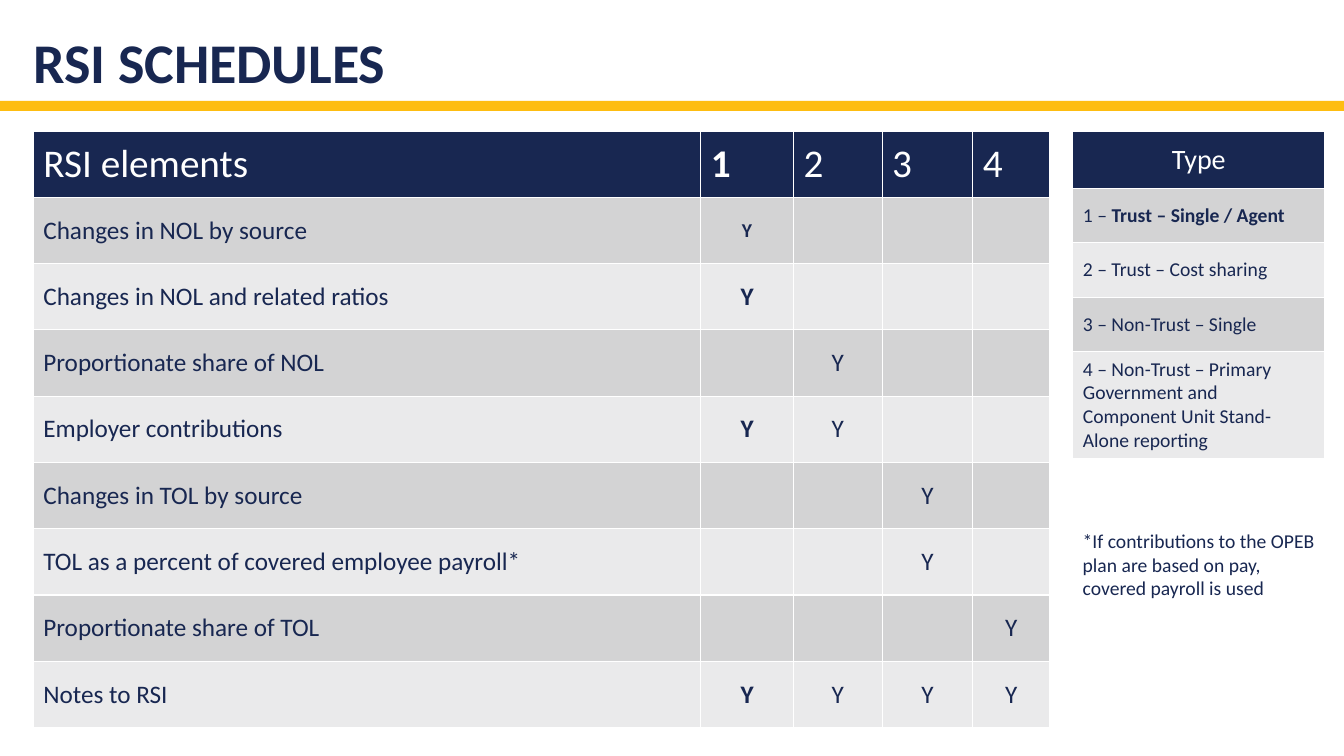
from pptx import Presentation
from pptx.dml.color import RGBColor as Rgb
from pptx.enum.shapes import MSO_SHAPE as Shape
from pptx.enum.text import MSO_ANCHOR as Anchor, MSO_AUTO_SIZE as Auto, PP_ALIGN as Align
from pptx.util import Inches, Pt

TITLE = "RSI SCHEDULES"
HEADS = ["RSI elements", "1", "2", "3", "4"]
ITEMS = [
    ("Changes in NOL by source", "1"),
    ("Changes in NOL and related ratios", "1"),
    ("Proportionate share of NOL", "2"),
    ("Employer contributions", "12"),
    ("Changes in TOL by source", "3"),
    ("TOL as a percent of covered employee payroll*", "3"),
    ("Proportionate share of TOL", "4"),
    ("Notes to RSI", "1234"),
]
TYPES = [
    [("1 – ", False), ("Trust – Single / Agent", True)],
    [("2 – Trust – Cost sharing", False)],
    [("3 – Non-Trust – Single", False)],
    [("4 – Non-Trust – Primary Government and Component Unit Stand-Alone reporting", False)],
]
NOTE = "*If contributions to the OPEB plan are based on pay, covered payroll is used"

HEX = {"navy": "182751", "gold": "FEBD11", "white": "FFFFFF", "dark": "D3D3D4", "light": "EAEAEB"}
FONT = "Calibri"
WIDE, HIGH = 13.33, 7.5
LEFT, TOP, SIDE = 0.33, 1.3, 10.64
COLS = [6.62, 0.92, 0.88, 0.9, 0.76]
ROWS = [5.92 / 9] * 9
TYPE_COLS = [2.5]
TYPE_ROWS = [0.57, 0.54, 0.54, 0.54, 1.06]


def tint(name):
    return Rgb.from_string(HEX[name])


def write(frame, runs, size, color="navy", align=Align.LEFT):
    para = frame.paragraphs[0]
    para.alignment = align
    for text, bold in runs:
        run = para.add_run()
        run.text = text
        font = run.font
        font.name, font.size, font.bold = FONT, Pt(size), bold
        font.color.rgb = tint(color)
    return para


def grid(slide, left, cols, rows):
    box = [Inches(n) for n in (left, TOP, sum(cols), sum(rows))]
    table = slide.shapes.add_table(len(rows), len(cols), *box).table
    for col, width in zip(table.columns, cols):
        col.width = Inches(width)
    for i, (row, height) in enumerate(zip(table.rows, rows)):
        row.height = Inches(height)
        for cell in row.cells:
            cell.fill.solid()
            cell.fill.fore_color.rgb = tint("navy" if i == 0 else "dark" if i % 2 else "light")
            cell.vertical_anchor = Anchor.MIDDLE
    return table


deck = Presentation()
deck.slide_width, deck.slide_height = Inches(WIDE), Inches(HIGH)
slide = deck.slides.add_slide(deck.slide_layouts[5])

bar = slide.shapes.add_shape(Shape.RECTANGLE, 0, Inches(1), deck.slide_width, Inches(0.1))
bar.shadow.inherit = False
bar.fill.solid()
bar.fill.fore_color.rgb = tint("gold")
bar.line.fill.background()

title = slide.shapes.title
title.left, title.top = Inches(LEFT), 0
title.width, title.height = Inches(WIDE - 2 * LEFT), Inches(1)
frame = title.text_frame
frame.auto_size = Auto.NONE
frame.vertical_anchor = Anchor.BOTTOM
frame.margin_left = frame.margin_right = 0
write(frame, [(TITLE, True)], 40).line_spacing = 0.9

main = grid(slide, LEFT, COLS, ROWS)
for c, head in enumerate(HEADS):
    write(main.cell(0, c).text_frame, [(head, head == "1")], 28, "white")
for r, (item, marks) in enumerate(ITEMS, 1):
    write(main.cell(r, 0).text_frame, [(item, False)], 18)
    for mark in marks:
        size = 14 if r == 1 else 18
        write(main.cell(r, int(mark)).text_frame, [("Y", mark == "1")], size, align=Align.CENTER)

key = grid(slide, SIDE, TYPE_COLS, TYPE_ROWS)
write(key.cell(0, 0).text_frame, [("Type", False)], 20, "white", Align.CENTER)
for r, runs in enumerate(TYPES, 1):
    write(key.cell(r, 0).text_frame, runs, 14)

note = slide.shapes.add_textbox(Inches(SIDE), Inches(5.2), Inches(TYPE_COLS[0]), Inches(1.11))
note.text_frame.word_wrap = True
write(note.text_frame, [(NOTE, False)], 14)

deck.save("out.pptx")
